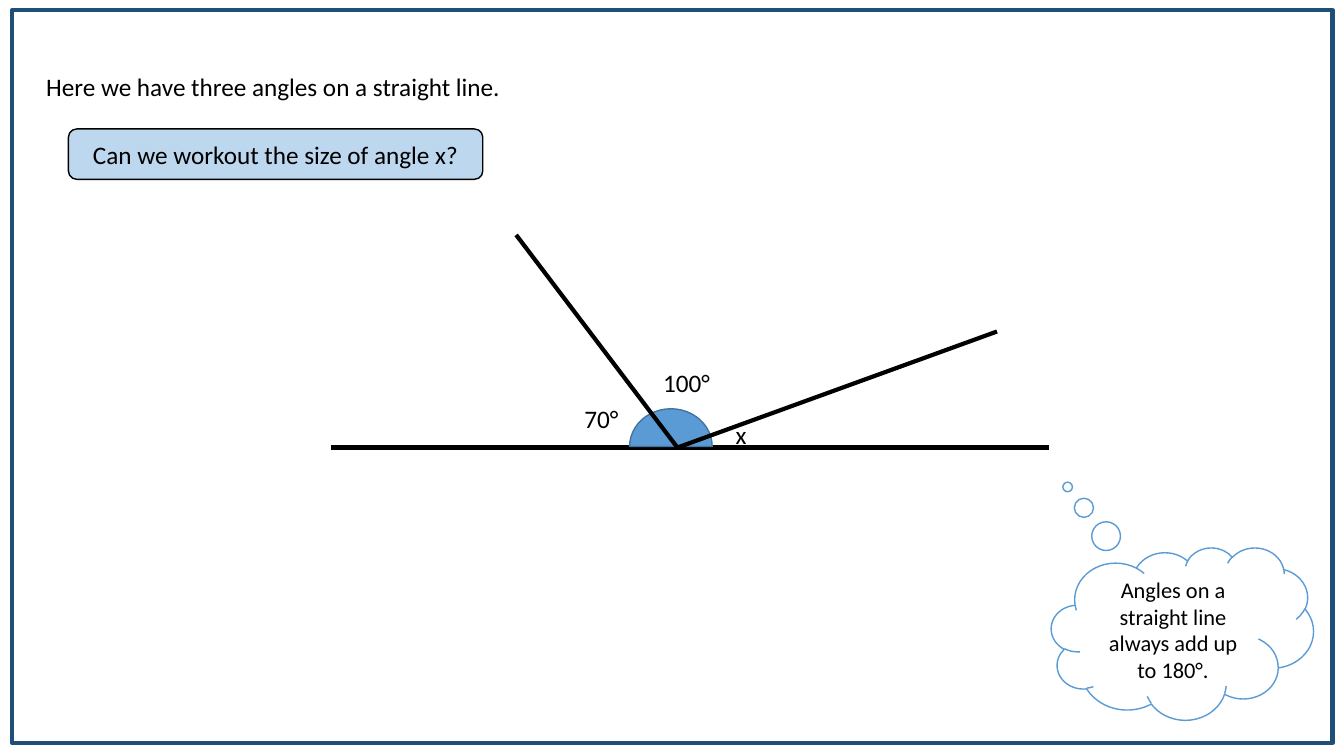
from lxml import etree
from pptx import Presentation
from pptx import util as u
from pptx.dml.color import RGBColor
from pptx.enum import shapes, text
from pptx.oxml.ns import qn

BLACK = RGBColor(0x00, 0x00, 0x00)
NAVY = RGBColor(0x1F, 0x4E, 0x79)
BLUE = RGBColor(0x5B, 0x9B, 0xD5)
DARK_BLUE = RGBColor(0x43, 0x73, 0x9E)
PALE_BLUE = RGBColor(0xBD, 0xD7, 0xEE)
LABEL_HEIGHT = 28.8


def write(shape, words, size=18, align=text.PP_ALIGN.LEFT, wrap=False):
    """Put one formatted paragraph in a shape."""
    frame = shape.text_frame
    frame.word_wrap = wrap
    para = frame.paragraphs[0]
    para.alignment = align
    span = para.add_run()
    span.text = words
    for name, value in {"name": "Calibri", "size": u.Pt(size)}.items():
        setattr(span.font, name, value)
    span.font.color.rgb = BLACK


def add_label(page, words, box):
    """Add an unwrapped text box."""
    write(page.shapes.add_textbox(*map(u.Pt, box)), words)


def add_outline(page, kind, box, fill, line, weight=1):
    """Add a preset shape; a fill of None leaves it empty."""
    shape = page.shapes.add_shape(kind, *map(u.Pt, box))
    shape.shadow.inherit = False
    if fill is None:
        shape.fill.background()
    else:
        shape.fill.solid()
        shape.fill.fore_color.rgb = fill
    shape.line.color.rgb = line
    shape.line.width = u.Pt(weight)
    return shape


def add_ray(page, start, end):
    """Draw a thick black line between two points."""
    ray = page.shapes.add_connector(
        shapes.MSO_CONNECTOR.STRAIGHT, *map(u.Pt, (*start, *end)))
    ray.line.color.rgb = BLACK
    ray.line.width = u.Pt(3)
    etree.SubElement(ray._element.spPr, qn("a:effectLst"))


def add_question(page, box):
    """Add the opening sentence and the question panel under it."""
    left, top, width, height = box
    add_label(page, "Here we have three angles on a straight line.",
              (left, top, width, LABEL_HEIGHT))
    panel_top = top + 44.64
    panel = add_outline(page, shapes.MSO_SHAPE.ROUNDED_RECTANGLE,
                        (left + 23, panel_top, 296, top + height - panel_top),
                        PALE_BLUE, BLACK)
    panel.text_frame.vertical_anchor = text.MSO_ANCHOR.MIDDLE
    write(panel, "Can we workout the size of angle x?",
          align=text.PP_ALIGN.CENTER)


def add_angles(page, box):
    """Draw the straight line, its two rays and the three angle labels."""
    left, top, width, height = box
    base = top + height
    vertex = (left + 247.7, base)
    add_ray(page, (left, base), (left + width, base))
    arc = add_outline(page, shapes.MSO_SHAPE.PIE,
                      (left + 216, base - 30.24, 54, 59), BLUE, DARK_BLUE)
    arc.rotation = 90
    arc.adjustments[0], arc.adjustments[1] = 54, 162
    add_ray(page, (left + 132.5, top), vertex)
    add_ray(page, (left + 476, top + 69), vertex)
    for words, across, above, wide in (
            ("70°", 174.2, 35.3, 39), ("100°", 230.4, 61.2, 48),
            ("x", 282.2, 23.8, 22.3)):
        add_label(page, words,
                  (left + across, base - above, wide, LABEL_HEIGHT))


def add_reminder(page, box):
    """Add the thought cloud that states the rule."""
    cloud = add_outline(page, shapes.MSO_SHAPE.CLOUD_CALLOUT, box, None, BLUE)
    cloud.adjustments[0], cloud.adjustments[1] = -0.438, -0.851
    cloud.text_frame.vertical_anchor = text.MSO_ANCHOR.MIDDLE
    write(cloud, "Angles on a straight line always add up to 180°.",
          16, text.PP_ALIGN.CENTER, True)


def main():
    """Build the slide and save the deck."""
    deck = Presentation()
    deck.slide_width, deck.slide_height = u.Pt(960), u.Pt(540)
    page = deck.slides.add_slide(deck.slide_layouts[6])
    add_outline(page, shapes.MSO_SHAPE.RECTANGLE,
                (8.64, 7.2, 943.2, 523.4), None, NAVY, 3)
    add_question(page, (25.9, 47.5, 342.7, 80.64))
    add_angles(page, (236.2, 167.8, 513.4, 151.9))
    add_reminder(page, (751, 391, 187.2, 123.1))
    deck.save("out.pptx")


if __name__ == "__main__":
    main()
